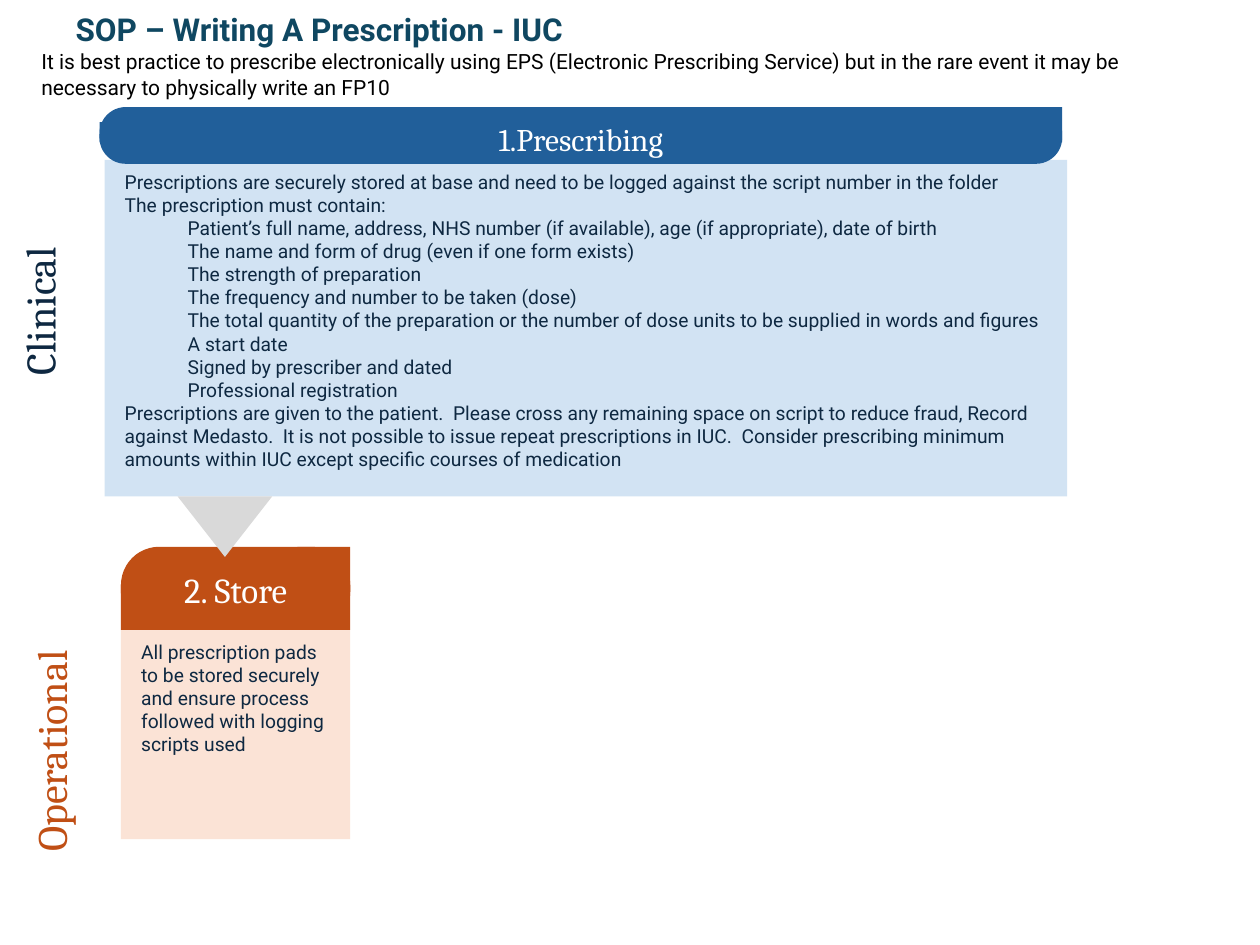
from pptx import Presentation
from pptx.dml.color import RGBColor
from pptx.enum.shapes import MSO_SHAPE
from pptx.enum.text import MSO_ANCHOR, MSO_AUTO_SIZE, PP_ALIGN
from pptx.util import Inches, Pt

RECTANGLE = MSO_SHAPE.RECTANGLE
ROUNDED = MSO_SHAPE.ROUNDED_RECTANGLE
TRIANGLE = MSO_SHAPE.ISOSCELES_TRIANGLE
LEFT, CENTER = PP_ALIGN.LEFT, PP_ALIGN.CENTER
TOP = MSO_ANCHOR.TOP
NO_FIT = MSO_AUTO_SIZE.NONE

NAVY = RGBColor(0x0E, 0x28, 0x41)
TEAL = RGBColor(0x0F, 0x47, 0x61)
BLUE = RGBColor(0x21, 0x5F, 0x9A)
PALE_BLUE = RGBColor(0xD2, 0xE3, 0xF3)
ORANGE = RGBColor(0xC0, 0x4F, 0x15)
PALE_ORANGE = RGBColor(0xFB, 0xE3, 0xD6)
GREY = RGBColor(0xD9, 0xD9, 0xD9)
WHITE = RGBColor(0xFF, 0xFF, 0xFF)
BLACK = RGBColor(0, 0, 0)

HEADING_FONT, BODY_FONT = "Cambria", "Roboto"
CORNER = 0.46
TITLE = "SOP – Writing A Prescription - IUC"
INTRO = (
    "It is best practice to prescribe electronically using EPS (Electronic Prescribing "
    "Service) but in the rare event it may be necessary to physically write an FP10"
)
PRESCRIBING = [
    ("Prescriptions are securely stored at base and need to be logged against "
     "the script number in the folder", 0),
    ("The prescription must contain:", 0),
    ("Patient’s full name, address, NHS number (if available), age (if appropriate), "
     "date of birth", 1),
    ("The name and form of drug (even if one form exists)", 1),
    ("The strength of preparation", 1),
    ("The frequency and number to be taken (dose)", 1),
    ("The total quantity of the preparation or the number of dose units to be supplied "
     "in words and figures", 1),
    ("A start date", 1),
    ("Signed by prescriber and dated", 1),
    ("Professional registration", 1),
    ("Prescriptions are given to the patient.  Please cross any remaining space on script "
     "to reduce fraud, Record against Medasto.  It is not possible to issue repeat "
     "prescriptions in IUC.  Consider prescribing minimum amounts within IUC except "
     "specific courses of medication", 0),
]
STORE = [("All prescription pads to be stored securely and ensure process followed "
          "with logging scripts used", 0)]


def write(shape, lines, *, size, color, font=BODY_FONT, bold=False, align=LEFT, inset=(0.1, 0.05)):
    """Fill a shape with (text, indent level) lines in one format."""
    frame = shape.text_frame
    frame.word_wrap = True
    frame.auto_size = NO_FIT
    frame.vertical_anchor = TOP
    frame.margin_left = frame.margin_right = Inches(inset[0])
    frame.margin_top = frame.margin_bottom = Inches(inset[1])
    for index, (text, level) in enumerate(lines):
        para = frame.add_paragraph() if index else frame.paragraphs[0]
        para.alignment = align
        if level:
            para._p.get_or_add_pPr().set("marL", str(Inches(level / 2)))
        span = para.add_run()
        span.text = text
        span.font.name = font
        span.font.size = Pt(size)
        span.font.bold = bold
        span.font.color.rgb = color


def add_block(page, kind, area, color, *, rotation=0):
    """Add a flat filled shape without outline."""
    block = page.shapes.add_shape(kind, *map(Inches, area))
    block.shadow.inherit = False
    block.fill.solid()
    block.fill.fore_color.rgb = color
    block.line.fill.background()
    block.rotation = rotation
    if kind == ROUNDED:
        block.adjustments[0] = CORNER
    return block


def add_label(page, text, area, *, rotation=0, **style):
    """Add a text box holding one line of text."""
    box = page.shapes.add_textbox(*map(Inches, area))
    box.rotation = rotation
    write(box, [(text, 0)], **style)


def add_title(page):
    """Place and format the title placeholder."""
    title = page.shapes.title
    title.left, title.top, title.width, title.height = map(Inches, (0.5, 0.01, 8.85, 0.41))
    write(title, [(TITLE, 0)], size=18, color=TEAL, bold=True)
    para = title.text_frame.paragraphs[0]
    para.line_spacing = 1.07
    para.space_before, para.space_after = Pt(8), Pt(4)


def add_step(page, heading, lines, *, body, header, split, lower, upper, label, size, colors):
    """Add a step: body panel and a header squared off on chosen corners."""
    dark, pale = colors
    left, top, width, height = header
    panel = add_block(page, RECTANGLE, body, pale)
    write(panel, lines, size=11, color=NAVY, inset=(0.16, 0.08))
    add_block(page, RECTANGLE, (left, lower[0], split, lower[1]), dark)
    add_block(page, ROUNDED, header, dark)
    add_block(page, RECTANGLE, (left + split, top, width - split, upper), dark)
    add_label(page, heading, (left, label, width, top + height - label),
              size=size, color=WHITE, font=HEADING_FONT, align=CENTER)


def main():
    """Build the prescription procedure slide."""
    deck = Presentation()
    deck.slide_width, deck.slide_height = Inches(10), Inches(7.5)
    page = deck.slides.add_slide(deck.slide_layouts[5])
    add_step(page, "1.Prescribing", PRESCRIBING, body=(0.83, 1.27, 7.64, 2.67),
             header=(0.79, 0.85, 7.64, 0.45), split=5.86, lower=(0.97, 0.16),
             upper=0.28, label=0.9, size=18, colors=(BLUE, PALE_BLUE))
    for text, area, color in (
        ("Clinical", (-1.11, 2.22, 2.84, 0.5), NAVY),
        ("Operational", (-0.89, 5.71, 2.58, 0.5), ORANGE),
    ):
        add_label(page, text, area, rotation=270, size=24, color=color,
                  font=HEADING_FONT, align=CENTER)
    add_step(page, "2. Store", STORE, body=(0.96, 5, 1.82, 1.66),
             header=(0.96, 4.34, 1.82, 0.66), split=1.4, lower=(4.64, 0.36),
             upper=0.66, label=4.46, size=20, colors=(ORANGE, PALE_ORANGE))
    add_title(page)
    add_label(page, INTRO, (0.23, 0.34, 9.53, 0.5), size=12, color=BLACK)
    add_block(page, TRIANGLE, (1.41, 3.94, 0.75, 0.48), GREY, rotation=180)
    deck.save("out.pptx")


if __name__ == "__main__":
    main()
